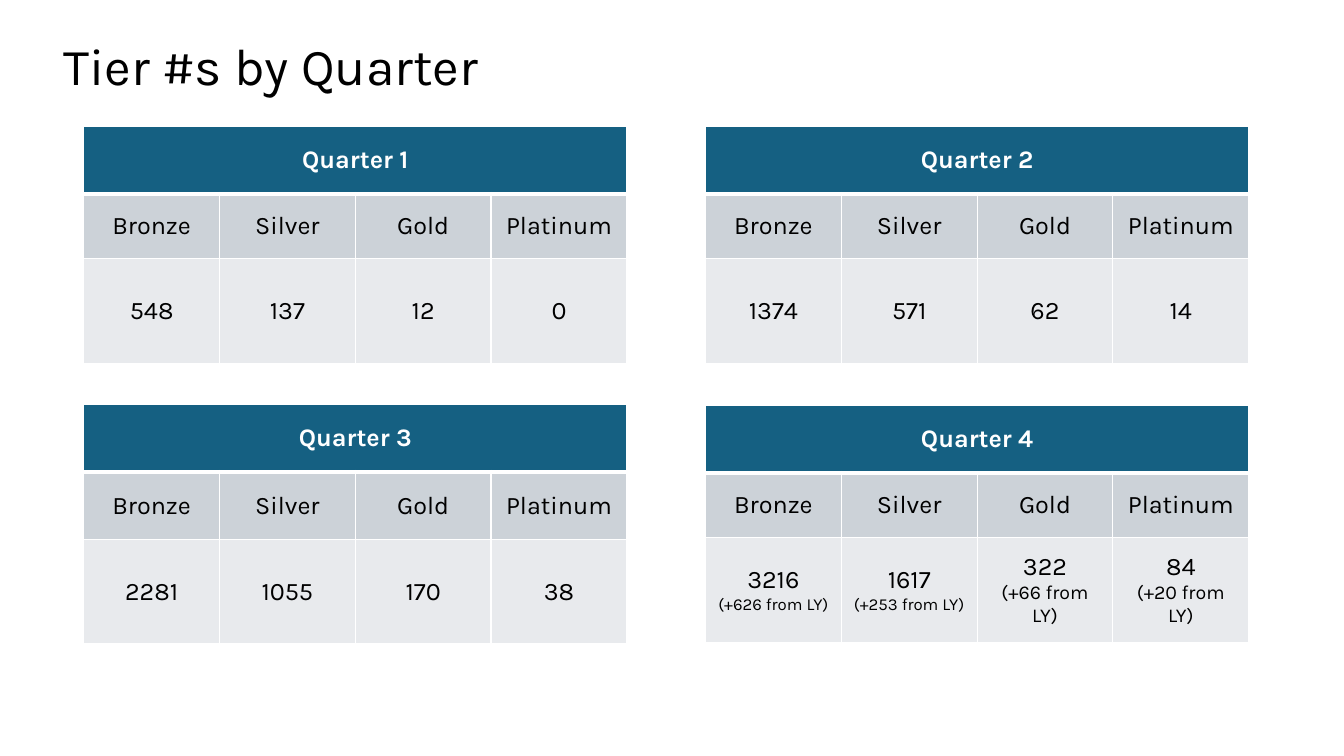
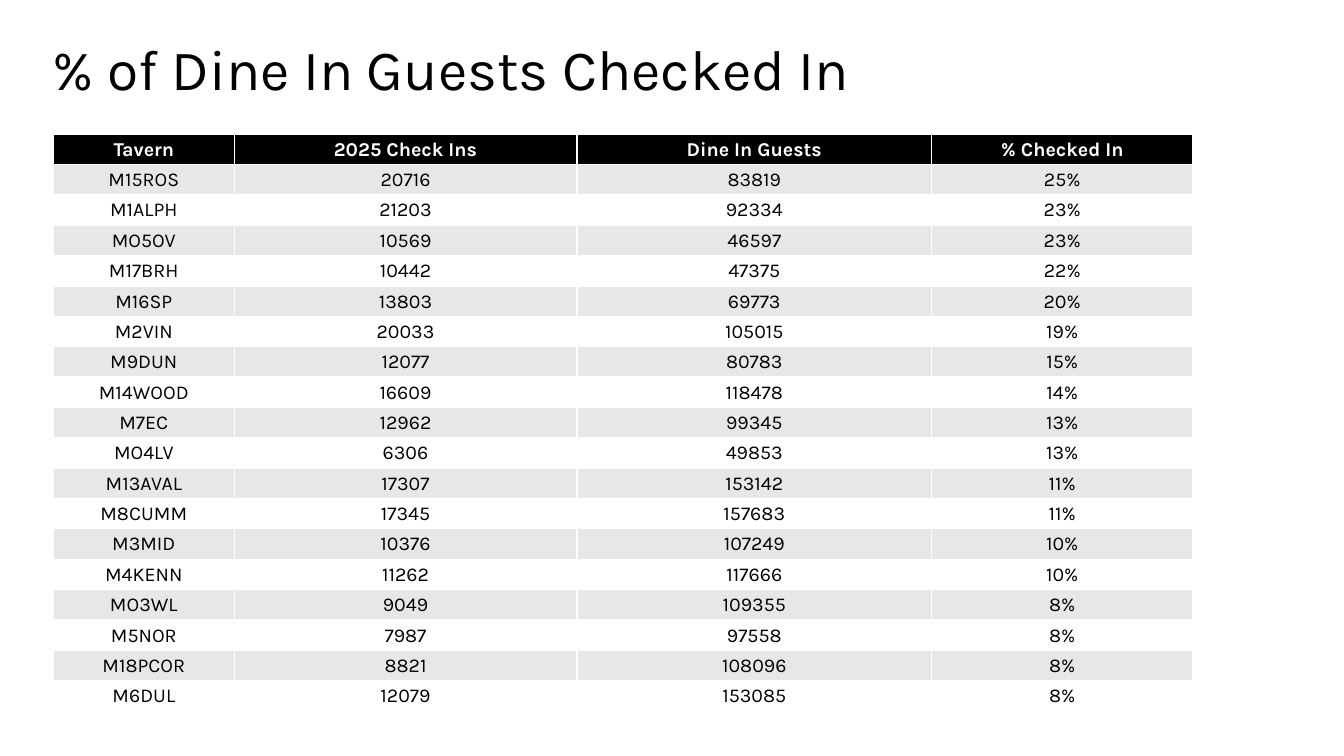
"""Build two slides of loyalty figures: tiers by quarter and check-ins by tavern."""
from pptx import Presentation
from pptx.dml.color import RGBColor
from pptx.enum.text import MSO_ANCHOR, MSO_AUTO_SIZE, PP_ALIGN
from pptx.oxml import parse_xml
from pptx.oxml.ns import nsdecls
from pptx.util import Cm, Pt

LEFT, CENTER = PP_ALIGN.LEFT, PP_ALIGN.CENTER
MIDDLE, NO_FIT = MSO_ANCHOR.MIDDLE, MSO_AUTO_SIZE.NONE
FONT = "Karla"
COLORS = {
    "black": "000000",
    "white": "FFFFFF",
    "blue": "156082",
    "tier": "CCD2D8",
    "count": "E8EAED",
    "band": "E7E7E7",
}


def write(tf, text, size=18, color="black", bold=False, align=CENTER, spacing=1.0, after=0, note_size=None):
    """Write the lines of text; lines after the first take note_size."""
    for i, line in enumerate(text.split("\n")):
        p = tf.paragraphs[0] if i == 0 else tf.add_paragraph()
        p.alignment, p.line_spacing, p.space_after = align, spacing, Pt(after)
        r = p.add_run()
        r.text = line
        r.font.name, r.font.bold = FONT, bold
        r.font.size = Pt(note_size if i and note_size else size)
        r.font.color.rgb = RGBColor.from_string(COLORS[color])


def style_cell(cell, fill, top=1, bottom=1):
    """Centre a cell vertically, with white borders and a solid fill."""
    cell.vertical_anchor = MIDDLE
    tcPr = cell._tc.get_or_add_tcPr()
    for side, width in (("L", 1), ("R", 1), ("T", top), ("B", bottom)):
        tcPr.append(parse_xml(
            f'<a:ln{side} {nsdecls("a")} w="{Pt(width)}"><a:solidFill>'
            f'<a:srgbClr val="{COLORS["white"]}"/></a:solidFill></a:ln{side}>'))
    cell.fill.solid()
    cell.fill.fore_color.rgb = RGBColor.from_string(COLORS[fill])


prs = Presentation()
prs.slide_width, prs.slide_height = Cm(33.87), Cm(19.05)

titles = [
    ("Tier #s by Quarter", 1.35, 0.97, 37, 0.8),
    ("% of Dine In Guests Checked In", 1.07, 1.12, 40.7, 0.7),
]
slides = []
for text, left, top, size, spacing in titles:
    s = prs.slides.add_slide(prs.slide_layouts[5])
    sp = s.shapes.title
    sp.left, sp.top, sp.width, sp.height = Cm(left), Cm(top), Cm(30.3), Cm(1.6)
    tf = sp.text_frame
    tf.word_wrap, tf.auto_size, tf.vertical_anchor = True, NO_FIT, MIDDLE
    write(tf, text, size=size, align=LEFT, spacing=spacing, after=6)
    slides.append(s)
tier_slide, checkin_slide = slides

TIERS = ["Bronze", "Silver", "Gold", "Platinum"]
quarters = [
    ("Quarter 1", 2.11, 3.18, 1.63, ["548", "137", "12", "0"]),
    ("Quarter 2", 17.78, 3.18, 1.63, ["1374", "571", "62", "14"]),
    ("Quarter 3", 2.11, 10.19, 1.7, ["2281", "1055", "170", "38"]),
    ("Quarter 4", 17.78, 10.21, 1.63,
     ["3216\n(+626 from LY)", "1617\n(+253 from LY)", "322\n(+66 from LY)", "84\n(+20 from LY)"]),
]
for name, left, top, tier_height, counts in quarters:
    heights = [1.7, tier_height, 2.64]
    table = tier_slide.shapes.add_table(
        3, 4, Cm(left), Cm(top), Cm(13.69), Cm(sum(heights))).table
    for row, height in zip(table.rows, heights):
        row.height = Cm(height)
    for col, (tier, count) in enumerate(zip(TIERS, counts)):
        style_cell(table.cell(0, col), "blue", bottom=3)
        style_cell(table.cell(1, col), "tier", top=3)
        style_cell(table.cell(2, col), "count")
        write(table.cell(1, col).text_frame, tier)
        write(table.cell(2, col).text_frame, count, note_size=12 if col < 2 else 14)
    table.cell(0, 0).merge(table.cell(0, 3))
    write(table.cell(0, 0).text_frame, name, color="white", bold=True)

checkins = [
    ("Tavern", "2025 Check Ins", "Dine In Guests", "% Checked In"),
    ("M15ROS", "20716", "83819", "25%"),
    ("M1ALPH", "21203", "92334", "23%"),
    ("MO5OV", "10569", "46597", "23%"),
    ("M17BRH", "10442", "47375", "22%"),
    ("M16SP", "13803", "69773", "20%"),
    ("M2VIN", "20033", "105015", "19%"),
    ("M9DUN", "12077", "80783", "15%"),
    ("M14WOOD", "16609", "118478", "14%"),
    ("M7EC", "12962", "99345", "13%"),
    ("MO4LV", "6306", "49853", "13%"),
    ("M13AVAL", "17307", "153142", "11%"),
    ("M8CUMM", "17345", "157683", "11%"),
    ("M3MID", "10376", "107249", "10%"),
    ("M4KENN", "11262", "117666", "10%"),
    ("MO3WL", "9049", "109355", "8%"),
    ("M5NOR", "7987", "97558", "8%"),
    ("M18PCOR", "8821", "108096", "8%"),
    ("M6DUL", "12079", "153085", "8%"),
]
widths = [4.55, 8.64, 8.94, 6.58]
table = checkin_slide.shapes.add_table(
    len(checkins), len(widths), Cm(1.35), Cm(3.38), Cm(sum(widths)), Cm(14.55)).table
for column, width in zip(table.columns, widths):
    column.width = Cm(width)
for i, values in enumerate(checkins):
    header = i == 0
    fill = "black" if header else "band" if i % 2 else "white"
    for j, value in enumerate(values):
        cell = table.cell(i, j)
        cell.margin_left = cell.margin_right = cell.margin_top = Cm(0.02)
        cell.margin_bottom = 0
        style_cell(cell, fill)
        write(cell.text_frame, value, size=14, color="white" if header else "black", bold=header)

prs.save("out.pptx")
